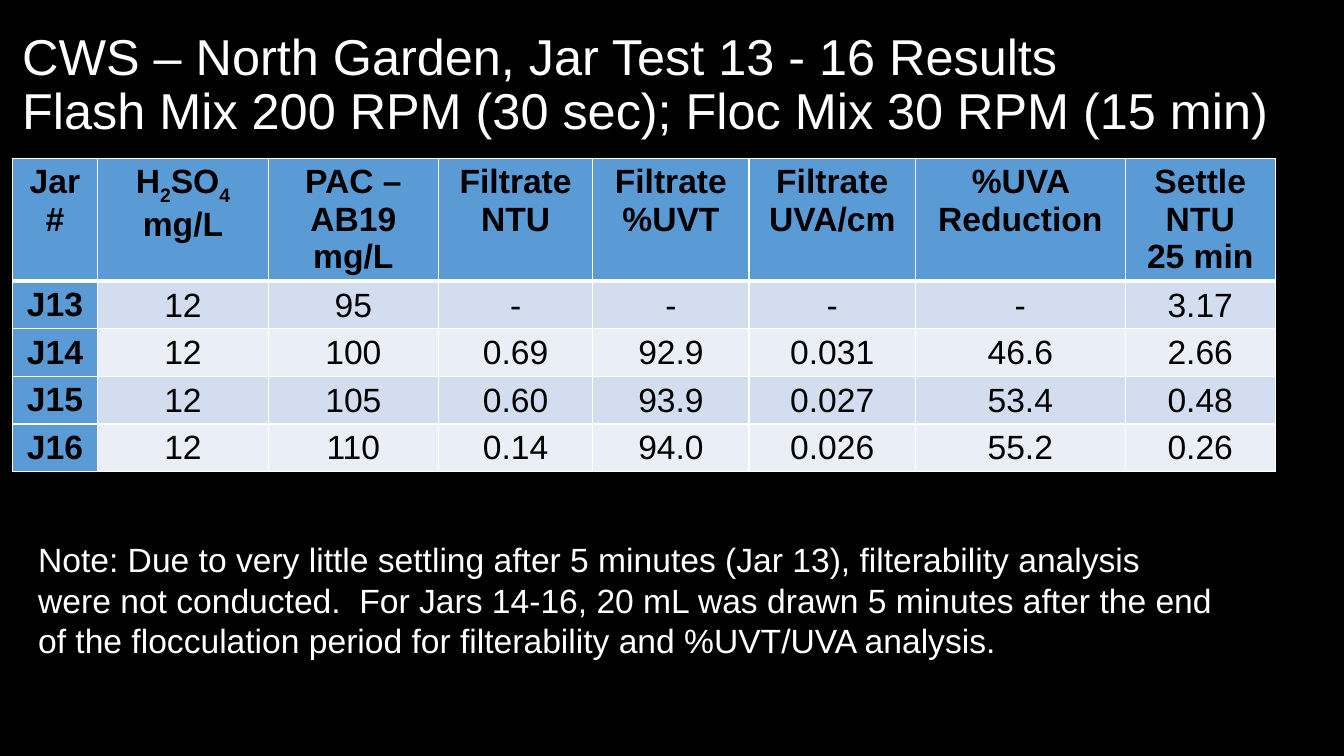
from lxml import etree
from pptx import Presentation
from pptx.dml.color import RGBColor
from pptx.enum.text import MSO_ANCHOR, MSO_AUTO_SIZE, PP_ALIGN
from pptx.oxml.ns import qn
from pptx.util import Inches, Pt

LEFT, CENTER = PP_ALIGN.LEFT, PP_ALIGN.CENTER
TOP, MIDDLE = MSO_ANCHOR.TOP, MSO_ANCHOR.MIDDLE
NO_AUTOFIT = MSO_AUTO_SIZE.NONE

BLACK = RGBColor(0x00, 0x00, 0x00)
WHITE = RGBColor(0xFF, 0xFF, 0xFF)
BLUE = RGBColor(0x5B, 0x9B, 0xD5)
BANDS = (RGBColor(0xD2, 0xDE, 0xEF), RGBColor(0xEA, 0xEF, 0xF7))

TITLE_ONLY = 5

TITLE = ("CWS – North Garden, Jar Test 13 - 16 Results\v"
         "Flash Mix 200 RPM (30 sec); Floc Mix 30 RPM (15 min)")

# Text between underscores is set as subscript
HEADER = ["Jar#", "H_2_SO_4_\nmg/L", "PAC – AB19\nmg/L", "Filtrate\nNTU",
          "Filtrate\n%UVT", "Filtrate\nUVA/cm", "%UVA Reduction",
          "Settle\nNTU\n25 min"]
RESULTS = [
    ["J13", "12", "95", "-", "-", "-", "-", "3.17"],
    ["J14", "12", "100", "0.69", "92.9", "0.031", "46.6", "2.66"],
    ["J15", "12", "105", "0.60", "93.9", "0.027", "53.4", "0.48"],
    ["J16", "12", "110", "0.14", "94.0", "0.026", "55.2", "0.26"],
]
COLUMN_WIDTHS = [0.85, 1.69, 1.69, 1.53, 1.55, 1.65, 2.08, 1.49]
HEADER_HEIGHT, RESULT_HEIGHT = 1.22, 0.47

NOTE = ("Note: Due to very little settling after 5 minutes (Jar 13), "
        "filterability analysis\n"
        "were not conducted.  For Jars 14-16, 20 mL was drawn 5 minutes "
        "after the end\n"
        "of the flocculation period for filterability and %UVT/UVA analysis.")


def write_text(frame, text, size=24, color=BLACK, bold=False, align=LEFT,
               font="Arial", line_spacing=None):
    """Fill a text frame: \\n starts a paragraph, \\v breaks a line."""
    for number, line in enumerate(text.split("\n")):
        para = frame.add_paragraph() if number else frame.paragraphs[0]
        para.alignment = align
        para.line_spacing = line_spacing
        for row, piece in enumerate(line.split("\v")):
            if row:
                para.add_line_break()
            for index, part in enumerate(piece.split("_")):
                if not part:
                    continue
                span = para.add_run()
                span.text = part
                span.font.name = font
                span.font.size = Pt(size)
                span.font.bold = bold
                span.font.color.rgb = color
                if index % 2:
                    span._r.get_or_add_rPr().set("baseline", "-25000")


def set_borders(cell, **widths):
    """Draw white cell borders, with widths in points by side L, R, T, B."""
    properties = cell._tc.get_or_add_tcPr()
    for side, width in widths.items():
        line = etree.SubElement(properties, qn(f"a:ln{side}"), w=str(Pt(width)))
        fill = etree.SubElement(line, qn("a:solidFill"))
        etree.SubElement(fill, qn("a:srgbClr"), val=str(WHITE))


class ResultsSlide:
    def __init__(self, deck, background=BLACK, color=WHITE):
        self.color = color
        self.page = deck.slides.add_slide(deck.slide_layouts[TITLE_ONLY])
        self.page.background.fill.solid()
        self.page.background.fill.fore_color.rgb = background

    def title(self, text, left, top, width, height):
        box = self.page.shapes.title
        box.left, box.top = Inches(left), Inches(top)
        box.width, box.height = Inches(width), Inches(height)
        frame = box.text_frame
        frame.auto_size = NO_AUTOFIT
        frame.word_wrap = True
        frame.vertical_anchor = MIDDLE
        write_text(frame, text, size=36, color=self.color, line_spacing=0.9)

    def note(self, text, left, top, width, height):
        box = self.page.shapes.add_textbox(
            Inches(left), Inches(top), Inches(width), Inches(height))
        box.text_frame.word_wrap = True
        write_text(box.text_frame, text, color=self.color)

    def table(self, rows, widths, heights, left, top):
        table = self.page.shapes.add_table(
            len(rows), len(widths), Inches(left), Inches(top),
            Inches(sum(widths)), Inches(sum(heights))).table
        for column, width in zip(table.columns, widths):
            column.width = Inches(width)
        for row, height in zip(table.rows, heights):
            row.height = Inches(height)
        for row, values in enumerate(rows):
            for column, value in enumerate(values):
                self.cell(table.cell(row, column), value, row, column)

    def cell(self, cell, value, row, column):
        is_label = row == 0 or column == 0
        set_borders(cell, L=1, R=1, T=3 if row == 1 else 1,
                    B=3 if row == 0 else 1)
        cell.fill.solid()
        cell.fill.fore_color.rgb = BLUE if is_label else BANDS[(row - 1) % 2]
        cell.vertical_anchor = TOP if is_label else MIDDLE
        if not is_label:
            cell.margin_left = cell.margin_right = Inches(0.01)
            cell.margin_top, cell.margin_bottom = Inches(0.01), 0
        write_text(cell.text_frame, value, bold=is_label, align=CENTER)


def main():
    deck = Presentation()
    deck.slide_width, deck.slide_height = Inches(13.33), Inches(7.5)
    slide = ResultsSlide(deck)

    # Heading
    slide.title(TITLE, 0.12, 0.13, 13.03, 1.45)

    # Jar test results
    heights = [HEADER_HEIGHT] + [RESULT_HEIGHT] * len(RESULTS)
    slide.table([HEADER] + RESULTS, COLUMN_WIDTHS, heights, 0.12, 1.57)

    # Note on the method
    slide.note(NOTE, 0.28, 5.3, 12.05, 1.31)

    deck.save("out.pptx")


if __name__ == "__main__":
    main()
